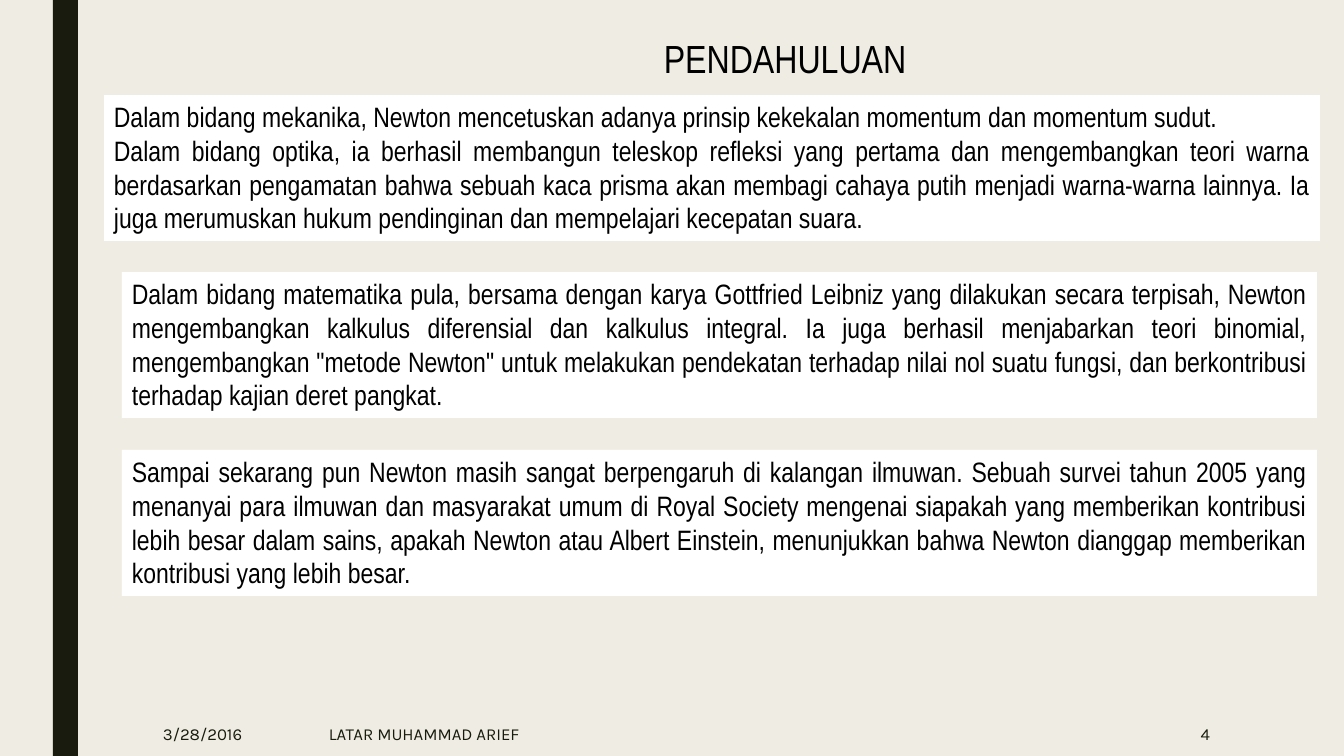
"""Build the PENDAHULUAN slide about Newton's work."""
from dataclasses import dataclass

import pptx
import pptx.dml.color
import pptx.enum.shapes
import pptx.enum.text
import pptx.util

RGB = pptx.dml.color.RGBColor
ALIGN = pptx.enum.text.PP_ALIGN
ANCHOR = pptx.enum.text.MSO_ANCHOR
FIT = pptx.enum.text.MSO_AUTO_SIZE
RECT = pptx.enum.shapes.MSO_SHAPE.RECTANGLE

CREAM = RGB(0xEF, 0xED, 0xE3)
DARK = RGB(0x19, 0x1B, 0x0E)
WHITE = RGB(0xFF, 0xFF, 0xFF)
BLACK = RGB(0x00, 0x00, 0x00)

WIDE, HIGH = 1344, 756
SCALE = 12192000 / WIDE

BODY = {"name": "Arial Narrow", "size": pptx.util.Pt(20)}
HEAD = {"name": "Arial Narrow", "size": pptx.util.Pt(28)}
FOOT = {"name": "Karla", "size": pptx.util.Pt(12)}

GROW = {"word_wrap": True, "auto_size": FIT.SHAPE_TO_FIT_TEXT, "vertical_anchor": ANCHOR.TOP}
LOOSE = {**GROW, "word_wrap": False}
FIXED = {"word_wrap": True, "auto_size": FIT.NONE, "vertical_anchor": ANCHOR.MIDDLE}


@dataclass(frozen=True)
class Label:
    """Text with its place in px and its format."""
    left: int
    top: int
    width: int
    height: int
    lines: tuple[str, ...]
    font: dict
    frame: dict
    align: ALIGN
    color: RGB = BLACK
    fill: RGB | None = None


def px(size: int) -> int:
    """Turn px into EMU."""
    return round(size * SCALE)


def panel(left: int, top: int, width: int, *lines: str) -> Label:
    """Describe a white text panel."""
    return Label(left, top, width, 146, lines, BODY, GROW, ALIGN.JUSTIFY, fill=WHITE)


def footer(left: int, width: int, line: str, align: ALIGN = ALIGN.LEFT) -> Label:
    """Describe a footer field."""
    return Label(left, 712, width, 44, (line,), FOOT, FIXED, align, DARK)


LABELS = (
    panel(
        104, 95, 1216,
        "Dalam bidang mekanika, Newton mencetuskan adanya prinsip kekekalan momentum dan "
        "momentum sudut.",
        "Dalam bidang optika, ia berhasil membangun teleskop refleksi yang pertama dan "
        "mengembangkan teori warna berdasarkan pengamatan bahwa sebuah kaca prisma akan "
        "membagi cahaya putih menjadi warna-warna lainnya. Ia juga merumuskan hukum "
        "pendinginan dan mempelajari kecepatan suara.",
    ),
    panel(
        122, 272, 1195,
        "Dalam bidang matematika pula, bersama dengan karya Gottfried Leibniz yang dilakukan "
        "secara terpisah, Newton mengembangkan kalkulus diferensial dan kalkulus integral. Ia "
        "juga berhasil menjabarkan teori binomial, mengembangkan \"metode Newton\" untuk "
        "melakukan pendekatan terhadap nilai nol suatu fungsi, dan berkontribusi terhadap "
        "kajian deret pangkat.",
    ),
    panel(
        122, 450, 1195,
        "Sampai sekarang pun Newton masih sangat berpengaruh di kalangan ilmuwan. Sebuah "
        "survei tahun 2005 yang menanyai para ilmuwan dan masyarakat umum di Royal Society "
        "mengenai siapakah yang memberikan kontribusi lebih besar dalam sains, apakah Newton "
        "atau Albert Einstein, menunjukkan bahwa Newton dianggap memberikan kontribusi yang "
        "lebih besar.",
    ),
    Label(652, 29, 266, 57, ("PENDAHULUAN",), HEAD, LOOSE, ALIGN.CENTER),
    footer(153, 133, "3/28/2016"),
    footer(319, 692, "LATAR MUHAMMAD ARIEF"),
    footer(1044, 176, "4", ALIGN.RIGHT),
)


def block(slide: pptx.slide.Slide, box: tuple[int, ...], fill: RGB) -> pptx.shapes.autoshape.Shape:
    """Draw a plain filled rectangle."""
    shape = slide.shapes.add_shape(RECT, *map(px, box))
    shape.shadow.inherit = False
    shape.fill.solid()
    shape.fill.fore_color.rgb = fill
    shape.line.fill.background()
    return shape


def write(slide: pptx.slide.Slide, label: Label) -> None:
    """Draw a label, on a panel if it has a fill."""
    box = (label.left, label.top, label.width, label.height)
    if label.fill is None:
        shape = slide.shapes.add_textbox(*map(px, box))
    else:
        shape = block(slide, box, label.fill)
    frame = shape.text_frame
    for key, value in label.frame.items():
        setattr(frame, key, value)
    frame.text = "\n".join(label.lines)
    for para in frame.paragraphs:
        para.alignment = label.align
        for run in para.runs:
            for key, value in label.font.items():
                setattr(run.font, key, value)
            run.font.color.rgb = label.color


def main() -> None:
    """Build and save the slide."""
    deck = pptx.Presentation()
    deck.slide_width, deck.slide_height = px(WIDE), px(HIGH)
    slide = deck.slides.add_slide(deck.slide_layouts[6])
    slide.background.fill.solid()
    slide.background.fill.fore_color.rgb = CREAM
    block(slide, (53, 0, 25, HIGH), DARK)
    for label in LABELS:
        write(slide, label)
    deck.save("out.pptx")


if __name__ == "__main__":
    main()
